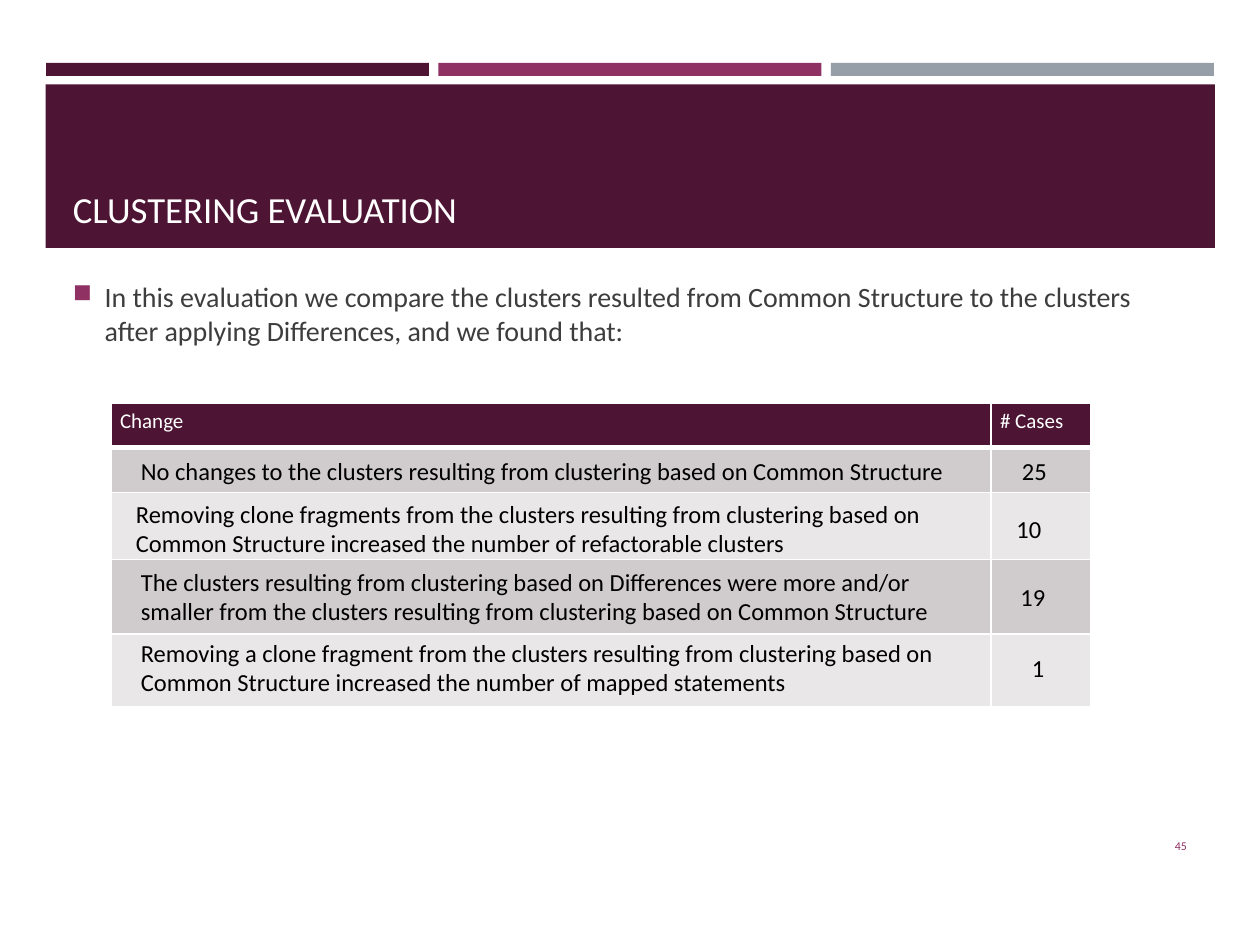
from dataclasses import dataclass

from lxml import etree
from pptx import Presentation
from pptx.dml.color import RGBColor
from pptx.enum.shapes import MSO_SHAPE
from pptx.enum.text import MSO_ANCHOR, MSO_AUTO_SIZE, PP_ALIGN
from pptx.oxml.ns import qn
from pptx.slide import Slide
from pptx.util import Cm, Pt

RECTANGLE = MSO_SHAPE.RECTANGLE
TOP, MIDDLE, BOTTOM = MSO_ANCHOR.TOP, MSO_ANCHOR.MIDDLE, MSO_ANCHOR.BOTTOM
LEFT, RIGHT = PP_ALIGN.LEFT, PP_ALIGN.RIGHT
GROW, FIXED = MSO_AUTO_SIZE.SHAPE_TO_FIT_TEXT, MSO_AUTO_SIZE.NONE


def rgb(hex_code):
    return RGBColor.from_string(hex_code)


@dataclass
class SlideBuilder:
    slide: Slide
    font: str = "Calibri"
    dark: str = "4D1434"
    accent: str = "903163"
    grey: str = "969FA7"
    body: str = "3D3D3D"
    white: str = "FFFFFF"
    black: str = "000000"
    bands: tuple = ("D0CCCE", "E9E7E8")

    def style(self, paragraph, size, color):
        paragraph.font.name = self.font
        paragraph.font.size = Pt(size)
        paragraph.font.bold = False
        paragraph.font.color.rgb = rgb(color)

    def bar(self, left, top, width, height, color):
        bar = self.slide.shapes.add_shape(RECTANGLE, Cm(left), Cm(top), Cm(width), Cm(height))
        bar.shadow.inherit = False
        bar.fill.solid()
        bar.fill.fore_color.rgb = rgb(color)
        bar.line.fill.background()

    def text(self, box, wording, size, color, anchor=TOP, align=LEFT, fit=FIXED):
        frame = self.slide.shapes.add_textbox(*map(Cm, box)).text_frame
        frame.word_wrap = True
        frame.auto_size = fit
        frame.vertical_anchor = anchor
        paragraph = frame.paragraphs[0]
        paragraph.text = wording
        paragraph.alignment = align
        self.style(paragraph, size, color)
        return paragraph

    def bullet(self, box, wording, size):
        paragraph = self.text(box, wording, size, self.body)
        properties = paragraph._p.get_or_add_pPr()
        properties.set("marL", str(Cm(0.64)))
        properties.set("indent", str(-Cm(0.64)))
        font_defaults = properties.find(qn("a:defRPr"))
        bullet_color = etree.Element(qn("a:buClr"))
        etree.SubElement(bullet_color, qn("a:srgbClr"), val=self.accent)
        bullet_size = etree.Element(qn("a:buSzPct"), val="92000")
        bullet_mark = etree.Element(qn("a:buChar"), char="■")
        for part in (bullet_color, bullet_size, bullet_mark):
            font_defaults.addprevious(part)
        paragraph.space_before = Pt(3.2)
        paragraph.space_after = Pt(4.5)

    def cell(self, cell, wording, fill, bottom_width):
        cell.margin_left = cell.margin_right = Cm(0.18)
        cell.margin_top = cell.margin_bottom = Cm(0.1 if wording else 0)
        properties = cell._tc.get_or_add_tcPr()
        for side, width in (("lnL", 1), ("lnR", 1), ("lnT", 1), ("lnB", bottom_width)):
            line = etree.SubElement(properties, qn(f"a:{side}"), w=str(Pt(width)))
            solid = etree.SubElement(line, qn("a:solidFill"))
            etree.SubElement(solid, qn("a:srgbClr"), val=self.white)
        cell.fill.solid()
        cell.fill.fore_color.rgb = rgb(fill)
        paragraph = cell.text_frame.paragraphs[0]
        if wording:
            paragraph.text = wording
        self.style(paragraph, 12, self.white)

    def grid(self, left, top, widths, heights, headings):
        table = self.slide.shapes.add_table(
            len(heights), len(widths), Cm(left), Cm(top), Cm(sum(widths)), Cm(sum(heights))
        ).table
        for column, width in zip(table.columns, widths):
            column.width = Cm(width)
        for index, (row, height) in enumerate(zip(table.rows, heights)):
            row.height = Cm(height)
            for cell, heading in zip(row.cells, headings):
                if index == 0:
                    self.cell(cell, heading, self.dark, 3)
                else:
                    self.cell(cell, "", self.bands[(index - 1) % 2], 1)


def main():
    deck = Presentation()
    deck.slide_width, deck.slide_height = Cm(25.4), Cm(19.05)
    page = SlideBuilder(deck.slides.add_slide(deck.slide_layouts[6]))

    for index, color in enumerate((page.dark, page.accent, page.grey)):
        page.bar(0.93 + 7.91 * index, 1.27, 7.72, 0.26, color)
    page.bar(0.92, 1.7, 23.57, 3.3, page.dark)
    page.text((1.22, 1.96, 22.99, 2.82), "CLUSTERING EVALUATION", 21, page.white, BOTTOM)
    page.bullet(
        (1.22, 5.51, 22.99, 2.24),
        "In this evaluation we compare the clusters resulted from Common Structure "
        "to the clusters after applying Differences, and we found that:",
        16,
    )
    page.text((22, 16.54, 2.18, 1.02), "45", 6.8, page.accent, MIDDLE, RIGHT)

    page.grid(2.24, 8.13, (17.74, 2.01), (0.89, 0.91, 1.35, 1.5, 1.47), ("Change", "# Cases"))
    findings = (
        ((2.59, 9.07, 17.22, 0.86),
         "No changes to the clusters resulting from clustering based on Common Structure",
         (20.35, 9.07, 1.22, 0.86), "25"),
        ((2.49, 9.93, 17.32, 1.45),
         "Removing clone fragments from the clusters resulting from clustering based on "
         "Common Structure increased the number of refactorable clusters",
         (20.24, 10.24, 1.42, 0.86), "10"),
        ((2.59, 11.3, 17.04, 1.45),
         "The clusters resulting from clustering based on Differences were more and/or "
         "smaller from the clusters resulting from clustering based on Common Structure",
         (20.32, 11.61, 1.24, 0.86), "19"),
        ((2.59, 12.73, 17.04, 1.45),
         "Removing a clone fragment from the clusters resulting from clustering based on "
         "Common Structure increased the number of mapped statements",
         (20.55, 13.03, 0.76, 0.86), "1"),
    )
    for change_box, change, cases_box, cases in findings:
        page.text(change_box, change, 14, page.black, fit=GROW)
        page.text(cases_box, cases, 14, page.black, fit=GROW)

    deck.save("out.pptx")


if __name__ == "__main__":
    main()
